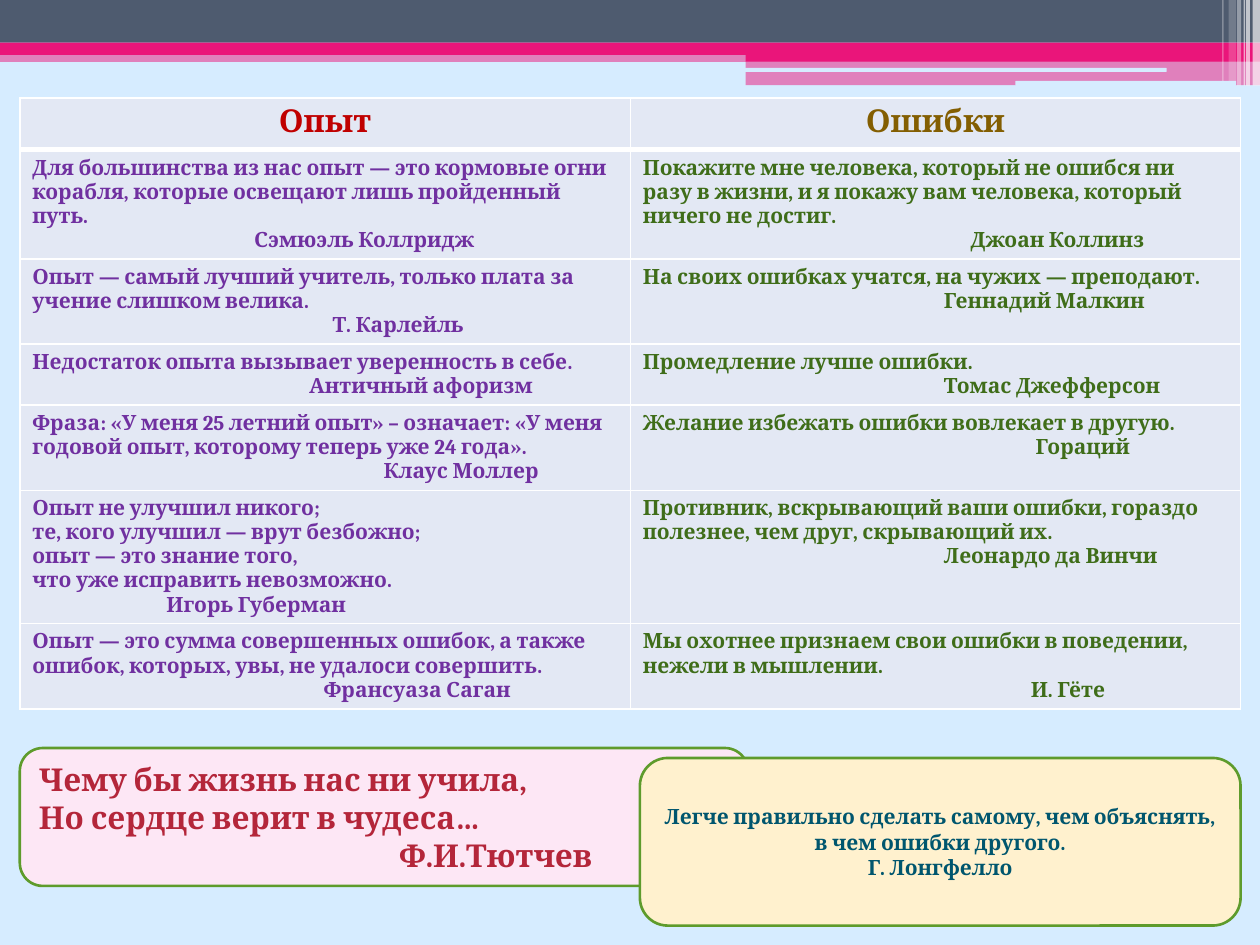
from lxml.etree import SubElement
from pptx import Presentation
from pptx.dml.color import RGBColor
from pptx.enum.shapes import MSO_SHAPE
from pptx.enum.text import MSO_ANCHOR, PP_ALIGN
from pptx.oxml.ns import qn
from pptx.util import Cm, Pt

WHITE = RGBColor(0xFF, 0xFF, 0xFF)
SKY = RGBColor(0xD6, 0xEC, 0xFF)
SLATE = RGBColor(0x4E, 0x5B, 0x6F)
PINK = RGBColor(0xEA, 0x15, 0x7A)
CELL = RGBColor(0xE3, 0xE8, 0xF4)
RED = RGBColor(0xC0, 0x00, 0x00)
BROWN = RGBColor(0x83, 0x5E, 0x01)
PURPLE = RGBColor(0x70, 0x30, 0xA0)
GREEN = RGBColor(0x3F, 0x6D, 0x19)
EDGE = RGBColor(0x5E, 0x9B, 0x2C)
ROSE = RGBColor(0xFD, 0xE7, 0xF5)
CREAM = RGBColor(0xFF, 0xF1, 0xCE)
WINE = RGBColor(0xB4, 0x26, 0x3A)
TEAL = RGBColor(0x00, 0x56, 0x6E)

# Header bands: left, top, width, height (cm), colour, opacity %
BANDS = [
    (0, 1.02, 25.4, 0.23, PINK, 50),
    (0, 0, 25.4, 0.86, SLATE, 100),
    (0, 0.86, 25.4, 0.25, PINK, 100),
    (15.03, 0.99, 10.37, 0.25, PINK, 100),
    (15.03, 1.23, 10.37, 0.49, PINK, 50),
]
SLOTS = [(15.01, 1.37, 8.51, 0.08), (20.47, 1.63, 4.45, 0.1)]
# Corner stripes: left, width, height (cm), opacity %
STRIPES = [
    (25.25, 0.15, 1.73, 65), (25.12, 0.08, 1.73, 65), (25.07, 0.03, 1.73, 60),
    (24.94, 0.08, 1.73, 40), (24.77, 0.15, 1.63, 20), (24.64, 0.03, 1.63, 30),
]

# Each quote: text, author, author indent (cm)
QUOTES = [
    (("Для большинства из нас опыт — это кормовые огни корабля, "
      "которые освещают лишь пройденный путь.", "Сэмюэль Коллридж", 4.47),
     ("Покажите мне человека, который не ошибся ни разу в жизни, и я покажу "
      "вам человека, который ничего не достиг.", "Джоан Коллинз", 6.61)),
    (("Опыт — самый лучший учитель, только плата за учение слишком велика.",
      "Т. Карлейль", 6.05),
     ("На своих ошибках учатся, на чужих — преподают.", "Геннадий Малкин", 6.07)),
    (("Недостаток опыта вызывает уверенность в себе.", "Античный афоризм", 5.58),
     ("Промедление лучше ошибки.", "Томас Джефферсон", 6.07)),
    (("Фраза: «У меня 25 летний опыт» – означает: «У меня годовой опыт, "
      "которому теперь уже 24 года».", "Клаус Моллер", 7.08),
     ("Желание избежать ошибки вовлекает в другую.", "Гораций", 7.92)),
    (("Опыт не улучшил никого;\nте, кого улучшил — врут безбожно;\n"
      "опыт — это знание того,\nчто уже исправить невозможно.",
      "Игорь Губерман", 2.7),
     ("Противник, вскрывающий ваши ошибки, гораздо полезнее, чем друг, "
      "скрывающий их.", "Леонардо да Винчи", 6.07)),
    (("Опыт — это сумма совершенных ошибок, а также ошибок, которых, увы, "
      "не удалоси совершить.", "Франсуаза Саган", 5.87),
     ("Мы охотнее признаем свои ошибки в поведении, нежели в мышлении.",
      "И. Гёте", 7.82)),
]


class Deck:
    font = "Cambria"

    def __init__(self):
        self.prs = Presentation()
        self.prs.slide_width, self.prs.slide_height = Cm(25.4), Cm(19.05)
        self.slide = self.prs.slides.add_slide(self.prs.slide_layouts[6])
        fill = self.slide.background.fill
        fill.solid()
        fill.fore_color.rgb = SKY

    def shape(self, kind, box, color, alpha=100):
        item = self.slide.shapes.add_shape(kind, *map(Cm, box))
        item.shadow.inherit = False
        item.fill.solid()
        item.fill.fore_color.rgb = color
        if alpha < 100:
            tone = item.fill._xPr.find(qn("a:solidFill"))[0]
            SubElement(tone, qn("a:alpha")).set("val", str(alpha * 1000))
        item.line.fill.background()
        return item

    def text(self, frame, lines, size, color, align=PP_ALIGN.LEFT):
        """Each line is a pair: words and left indent in cm."""
        frame.word_wrap = True
        for i, (words, indent) in enumerate(lines):
            para = frame.add_paragraph() if i else frame.paragraphs[0]
            para.alignment = align
            if indent:
                para._p.get_or_add_pPr().set("marL", str(Cm(indent)))
            for j, part in enumerate(words.split("\n")):
                if j:
                    para.add_line_break()
                run = para.add_run()
                run.text = part
                run.font.name, run.font.size = self.font, Pt(size)
                run.font.bold = True
                run.font.color.rgb = color

    def card(self, box, color, lines, size, ink, align):
        item = self.shape(MSO_SHAPE.ROUNDED_RECTANGLE, box, color)
        item.line.color.rgb, item.line.width = EDGE, Pt(1.5)
        item.text_frame.vertical_anchor = MSO_ANCHOR.MIDDLE
        self.text(item.text_frame, lines, size, ink, align)

    def cell(self, cell, base, lines, size, color, align):
        cell.fill.solid()
        cell.fill.fore_color.rgb = CELL
        props = cell._tc.get_or_add_tcPr()
        for i, (side, width) in enumerate(zip("LRTB", (1, 1, 1, base))):
            line = SubElement(props, qn(f"a:ln{side}"), w=str(Pt(width)))
            fill = SubElement(line, qn("a:solidFill"))
            SubElement(fill, qn("a:srgbClr"), val=str(WHITE))
            props.insert(i, line)
        self.text(cell.text_frame, lines, size, color, align)

    def table(self, box, heads, rows, inks):
        count = len(rows) + 1
        grid = self.slide.shapes.add_table(count, len(heads), *map(Cm, box)).table
        for row in grid.rows:
            row.height = Cm(box[3] / count)
        for c, (head, color) in enumerate(heads):
            self.cell(grid.cell(0, c), 3, [(head, 0)], 18, color, PP_ALIGN.CENTER)
        for r, row in enumerate(rows, 1):
            for c, (quote, author, indent) in enumerate(row):
                self.cell(grid.cell(r, c), 1, [(quote, 0), (author, indent)],
                          12, inks[c], PP_ALIGN.LEFT)


def main():
    deck = Deck()

    # Header decoration
    for *box, color, alpha in BANDS:
        deck.shape(MSO_SHAPE.RECTANGLE, box, color, alpha)
    for box in SLOTS:
        deck.shape(MSO_SHAPE.ROUNDED_RECTANGLE, box, SKY)
    for left, width, height, alpha in STRIPES:
        deck.shape(MSO_SHAPE.RECTANGLE, (left, 0, width, height), WHITE, alpha)

    # Quotes
    deck.table((0.4, 1.98, 24.61, 7.28), [("Опыт", RED), ("Ошибки", BROWN)],
               QUOTES, (PURPLE, GREEN))

    # Closing cards
    deck.card((0.4, 15.08, 14.68, 2.78), ROSE,
              [("Чему бы жизнь нас ни учила,\nНо сердце верит в чудеса…", 0),
               ("Ф.И.Тютчев", 7.26)], 18, WINE, PP_ALIGN.LEFT)
    deck.card((12.9, 15.28, 12.11, 3.38), CREAM,
              [("Легче правильно сделать самому, чем объяснять, "
                "в чем ошибки другого.\nГ. Лонгфелло", 0)],
              12, TEAL, PP_ALIGN.CENTER)

    deck.prs.save("out.pptx")


if __name__ == "__main__":
    main()
